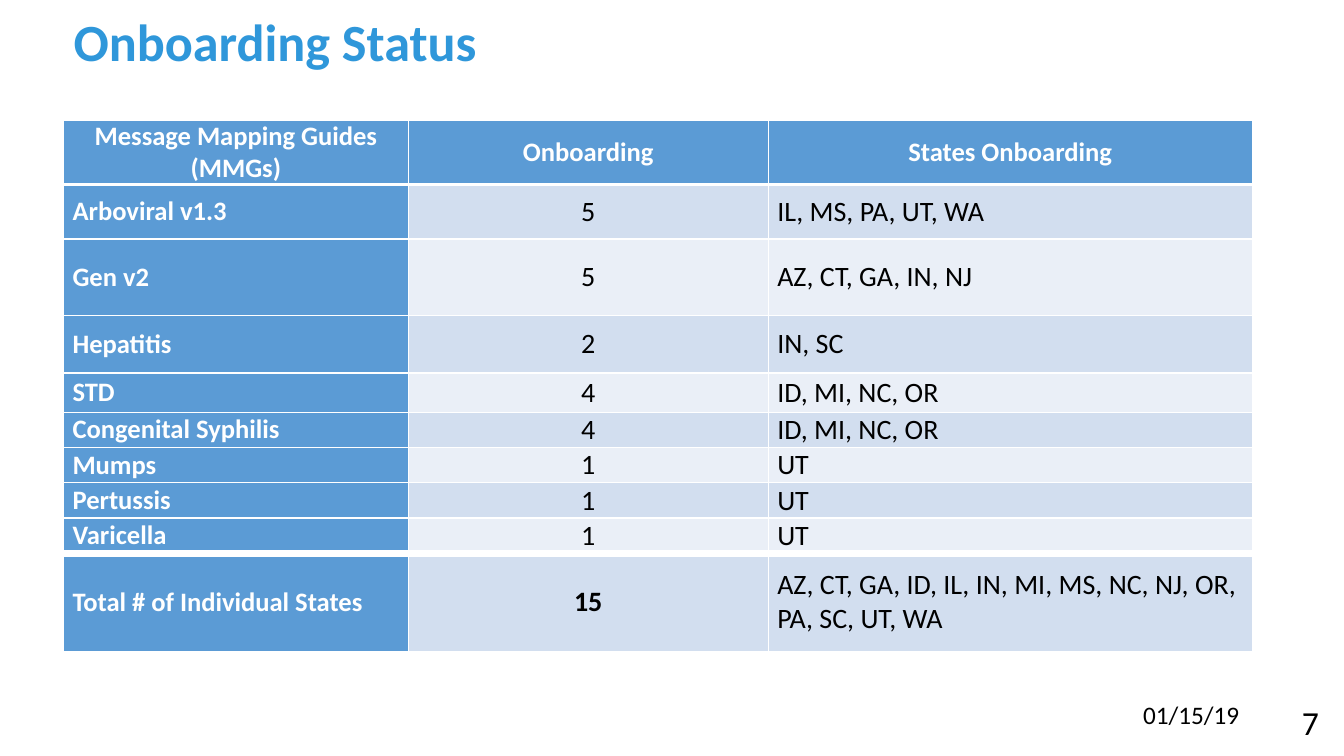
from pptx import Presentation
from pptx.util import Inches, Pt
from pptx.dml.color import RGBColor
from pptx.enum.text import PP_ALIGN as Align, MSO_ANCHOR as Anchor
from pptx.oxml import parse_xml
from pptx.oxml.ns import nsdecls

HEAD = ("Message Mapping Guides (MMGs)", "Onboarding", "States Onboarding")
GUIDES = [
    ("Arboviral v1.3", "5", "IL, MS, PA, UT, WA"),
    ("Gen v2", "5", "AZ, CT, GA, IN, NJ"),
    ("Hepatitis", "2", "IN, SC"),
    ("STD", "4", "ID, MI, NC, OR"),
    ("Congenital Syphilis", "4", "ID, MI, NC, OR"),
    ("Mumps", "1", "UT"),
    ("Pertussis", "1", "UT"),
    ("Varicella", "1", "UT"),
]
TOTAL = ("Total # of Individual States", "15",
         "AZ, CT, GA, ID, IL, IN, MI, MS, NC, NJ, OR, PA, SC, UT, WA")
COLS = (3.42, 3.57, 4.8)
ROWS = (0.59, 0.54, 0.76, 0.57, 0.39, 0.35, 0.35, 0.35, 0.35, 0.97)
BLUE, WHITE, BLACK = "5B9BD5", "FFFFFF", "000000"
BANDS = ("EAEFF7", "D2DEEF")


def hue(code):
    """Turn a hex string into a colour."""
    return RGBColor.from_string(code)


def put(item, values):
    """Set attributes from a dict of format values."""
    for name, value in values.items():
        setattr(item, name, value)


def place(shape, box):
    """Move a shape to a box in inches."""
    put(shape, dict(zip(("left", "top", "width", "height"), map(Inches, box))))


def write(frame, text, size, color, bold=False, align=Align.LEFT):
    """Write one formatted paragraph and return it."""
    frame.word_wrap = True
    para = frame.paragraphs[0]
    para.alignment = align
    run = para.add_run()
    run.text = text
    put(run.font, {"name": "Calibri", "size": Pt(size), "bold": bold})
    run.font.color.rgb = hue(color)
    return para


def edge(cell, widths):
    """Draw white borders, with widths in points by side."""
    props = cell._tc.get_or_add_tcPr()
    for spot, (side, width) in enumerate(widths.items()):
        props.insert(spot, parse_xml(
            f'<a:ln{side} {nsdecls("a")} w="{Pt(width)}"><a:solidFill>'
            f'<a:srgbClr val="{WHITE}"/></a:solidFill></a:ln{side}>'))


def title(slide, box):
    """Place the slide title in its box."""
    shape = slide.shapes.title
    place(shape, box)
    shape.text_frame.vertical_anchor = Anchor.BOTTOM
    para = write(shape.text_frame, "Onboarding Status", 37.3, "2F97DA", True)
    para.line_spacing = Pt(40)


def status(slide, left, top):
    """Build the status table from its top left corner."""
    data = [HEAD, *GUIDES, TOTAL]
    last = len(data) - 1
    box = map(Inches, (left, top, sum(COLS), sum(ROWS)))
    table = slide.shapes.add_table(len(data), len(COLS), *box).table
    for col, width in zip(table.columns, COLS):
        col.width = Inches(width)
    for row, height in zip(table.rows, ROWS):
        row.height = Inches(height)
    rules = [1, 3] + [1] * (last - 2) + [6, 1]
    for r, texts in enumerate(data):
        for c, text in enumerate(texts):
            cell = table.cell(r, c)
            label = r == 0 or c == 0
            put(cell, {"vertical_anchor": Anchor.MIDDLE,
                       "margin_left": Inches(0.09), "margin_right": Inches(0.09),
                       "margin_top": 0, "margin_bottom": 0})
            cell.fill.solid()
            cell.fill.fore_color.rgb = hue(BLUE if label else BANDS[r % 2])
            edge(cell, {"L": 1, "R": 1, "T": rules[r], "B": rules[r + 1]})
            write(cell.text_frame, text, 19 if label else 20,
                  WHITE if label else BLACK, label or (r == last and c == 1),
                  Align.CENTER if r == 0 or c == 1 else Align.LEFT)


def note(slide, box, text, size, align):
    """Add a footer text in its box."""
    shape = slide.shapes.add_textbox(*map(Inches, box))
    write(shape.text_frame, text, size, BLACK, align=align)


def main():
    """Build and save the slide."""
    deck = Presentation()
    put(deck, {"slide_width": Inches(13.33), "slide_height": Inches(7.5)})
    slide = deck.slides.add_slide(deck.slide_layouts[5])
    title(slide, (0.63, 0.05, 12, 0.71))
    status(slide, 0.63, 1.19)
    note(slide, (11.24, 6.89, 1.22, 0.4), "01/15/19", 18, Align.LEFT)
    note(slide, (11.92, 6.91, 1.26, 0.5), "7", 24, Align.RIGHT)
    deck.save("out.pptx")


if __name__ == "__main__":
    main()
